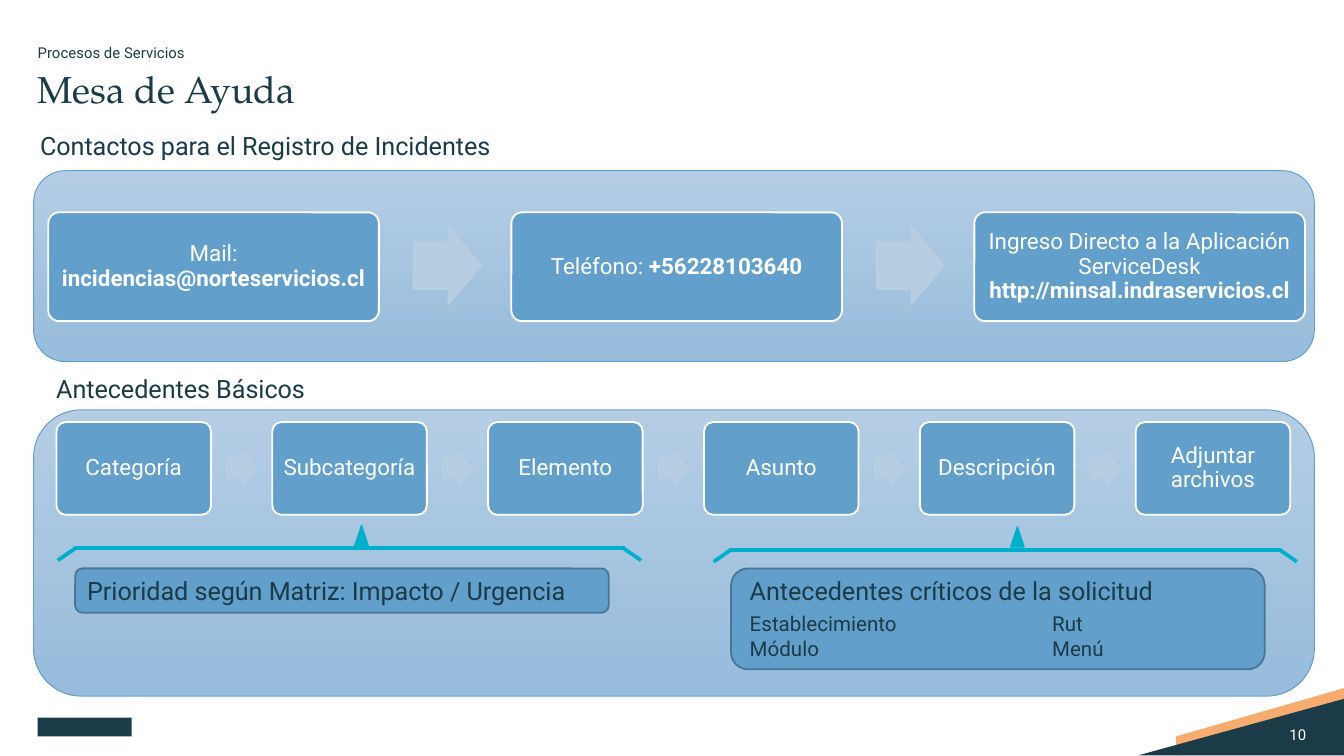
from lxml.etree import SubElement
from pptx import Presentation
from pptx.dml.color import RGBColor
from pptx.enum.shapes import MSO_CONNECTOR, MSO_SHAPE
from pptx.enum.text import MSO_ANCHOR, MSO_AUTO_SIZE, PP_ALIGN
from pptx.oxml.ns import qn
from pptx.util import Inches, Pt

NAVY = RGBColor(0x1A, 0x3B, 0x47)
ORANGE = RGBColor(0xF7, 0xAC, 0x6F)
BLUE = RGBColor(0x63, 0x9F, 0xCB)
DARK_BLUE = RGBColor(0x49, 0x76, 0x96)
PALE_BLUE = RGBColor(0xB7, 0xCD, 0xE2)
PANEL_TOP = RGBColor(0xB4, 0xCD, 0xE4)
PANEL_BOTTOM = RGBColor(0x97, 0xBC, 0xDC)
TEAL = RGBColor(0x00, 0xB0, 0xCA)
WHITE = RGBColor(0xFF, 0xFF, 0xFF)

prs = Presentation()
prs.slide_width = Inches(10)
prs.slide_height = Inches(10) * 9 // 16
slide = prs.slides.add_slide(prs.slide_layouts[1])
shapes = slide.shapes


def add_block(preset, box, fill, line=None, line_width=1):
    block = shapes.add_shape(preset, *[Inches(v) for v in box])
    block.shadow.inherit = False
    block.fill.solid()
    block.fill.fore_color.rgb = fill
    if line is None:
        block.line.fill.background()
    else:
        block.line.color.rgb = line
        block.line.width = Pt(line_width)
    return block


def add_run(paragraph, text, size, color=NAVY, bold=False, font="Roboto"):
    run = paragraph.add_run()
    run.text = text
    run.font.name = font
    run.font.size = Pt(size)
    run.font.bold = bold
    run.font.color.rgb = color


for corner, color in [
    ([(1000, 512), (875, 548), (875, 562), (1000, 544)], ORANGE),
    ([(847, 562), (1000, 520), (1000, 562)], NAVY),
]:
    builder = shapes.build_freeform(*corner[0], scale=Inches(0.01))
    builder.add_line_segments(corner[1:])
    band = builder.convert_to_shape()
    band.shadow.inherit = False
    band.fill.solid()
    band.fill.fore_color.rgb = color
    band.line.fill.background()

add_block(MSO_SHAPE.RECTANGLE, (0.28, 5.34, 0.7, 0.14), NAVY)

for top, height in [(3.05, 2.13), (1.27, 1.42)]:
    panel = add_block(MSO_SHAPE.ROUNDED_RECTANGLE, (0.25, top, 9.53, height), BLUE, BLUE, 0.5)
    panel.fill.gradient()
    panel.fill.gradient_angle = 270
    for stop, color in zip(panel.fill.gradient_stops, (PANEL_TOP, PANEL_BOTTOM)):
        stop.color.rgb = color

for holder, text, size, font, top, height, inset in [
    (shapes.title, "Mesa de Ayuda", 20, "TeX Gyre Pagella", 0.53, 0.75, 0),
    (slide.placeholders[1], "Procesos de Servicios", 8, "Roboto", 0.29, 0.21, 0.05),
]:
    holder.left, holder.top = Inches(0.28), Inches(top)
    holder.width, holder.height = Inches(9.45), Inches(height)
    frame = holder.text_frame
    frame.auto_size = MSO_AUTO_SIZE.NONE
    frame.vertical_anchor = MSO_ANCHOR.TOP
    frame.margin_left = frame.margin_right = 0
    frame.margin_top = frame.margin_bottom = Inches(inset)
    heading = frame.paragraphs[0]
    properties = heading._p.get_or_add_pPr()
    properties.set("marL", "0")
    properties.set("indent", "0")
    SubElement(properties, qn("a:buNone"))
    heading.alignment = PP_ALIGN.LEFT
    heading.line_spacing = 0.9
    heading.space_before = Pt(0)
    add_run(heading, text, size, font=font)

contacts = [
    ("Mail: ", "incidencias@norteservicios.cl"),
    ("Teléfono: ", "+56228103640"),
    ("Ingreso Directo a la Aplicación ServiceDesk ", "http://minsal.indraservicios.cl"),
]
steps = [
    (name, "")
    for name in ("Categoría", "Subcategoría", "Elemento", "Asunto", "Descripción", "Adjuntar archivos")
]
for flow, first, last, top, width, height, arrow_gap, arrow_box in [
    (contacts, 0.36, 7.25, 1.58, 2.46, 0.81, 0.25, (1.67, 0.52, 0.61)),
    (steps, 0.42, 8.45, 3.14, 1.15, 0.69, 0.11, (3.34, 0.24, 0.28)),
]:
    pitch = (last - first) / (len(flow) - 1)
    for i, (label, detail) in enumerate(flow):
        x = first + i * pitch
        card = add_block(MSO_SHAPE.ROUNDED_RECTANGLE, (x, top, width, height), BLUE, WHITE)
        card.adjustments[0] = 0.1
        frame = card.text_frame
        frame.word_wrap = True
        frame.vertical_anchor = MSO_ANCHOR.MIDDLE
        frame.margin_left = frame.margin_right = Inches(0.05)
        frame.margin_top = frame.margin_bottom = Inches(0.05)
        caption = frame.paragraphs[0]
        caption.alignment = PP_ALIGN.CENTER
        caption.line_spacing = 0.9
        add_run(caption, label, 12, WHITE)
        if detail:
            add_run(caption, detail, 12, WHITE, bold=True)
        if i < len(flow) - 1:
            arrow = add_block(MSO_SHAPE.RIGHT_ARROW, (x + width + arrow_gap, *arrow_box), PALE_BLUE)
            arrow.adjustments[0] = 0.6
            arrow.adjustments[1] = 0.5

for left, y in [(0.43, 4.08), (5.31, 4.09)]:
    right = left + 4.34
    for ends in [
        (left + 0.12, y, right - 0.12, y),
        (left + 0.13, y, left, y + 0.09),
        (right, y + 0.09, right - 0.13, y),
    ]:
        bracket = shapes.add_connector(MSO_CONNECTOR.STRAIGHT, *[Inches(v) for v in ends])
        bracket.line.color.rgb = TEAL
        bracket.line.width = Pt(2)
        SubElement(bracket._element.spPr, qn("a:effectLst"))
    add_block(MSO_SHAPE.ISOSCELES_TRIANGLE, (left + 2.21, y - 0.17, 0.1, 0.15), TEAL, TEAL, 0.75)

for left, height in [(0.56, 0.33), (5.44, 0.75)]:
    add_block(MSO_SHAPE.ROUNDED_RECTANGLE, (left, 4.23, 3.97, height), BLUE, DARK_BLUE)

for box, size, lines in [
    ((0.2, 0.92, 4.02, 0.33), 13.5, ["Contactos para el Registro de Incidentes"]),
    ((0.32, 2.73, 2.6, 0.33), 13.5, ["Antecedentes Básicos"]),
    ((0.55, 4.23, 4.08, 0.33), 13.5, ["Prioridad según Matriz: Impacto / Urgencia"]),
    ((5.48, 4.23, 4.08, 0.33), 13.5, ["Antecedentes críticos de la solicitud"]),
    ((5.48, 4.5, 4.08, 0.47), 11, ["Establecimiento\tRut", "Módulo\tMenú"]),
]:
    frame = shapes.add_textbox(*[Inches(v) for v in box]).text_frame
    frame.word_wrap = True
    for i, text in enumerate(lines):
        line = frame.add_paragraph() if i else frame.paragraphs[0]
        if "\t" in text:
            tabs = SubElement(line._p.get_or_add_pPr(), qn("a:tabLst"))
            SubElement(tabs, qn("a:tab"), pos=str(Inches(2.25)), algn="l")
        add_run(line, text, size)

page_frame = shapes.add_textbox(Inches(9.41), Inches(5.33), Inches(0.31), Inches(0.27)).text_frame
page_frame.word_wrap = True
page_frame.vertical_anchor = MSO_ANCHOR.MIDDLE
page_frame.margin_left = page_frame.margin_right = 0
page_frame.margin_top = page_frame.margin_bottom = 0
page_frame.paragraphs[0].alignment = PP_ALIGN.RIGHT
add_run(page_frame.paragraphs[0], "10", 8, WHITE)

prs.save("out.pptx")
